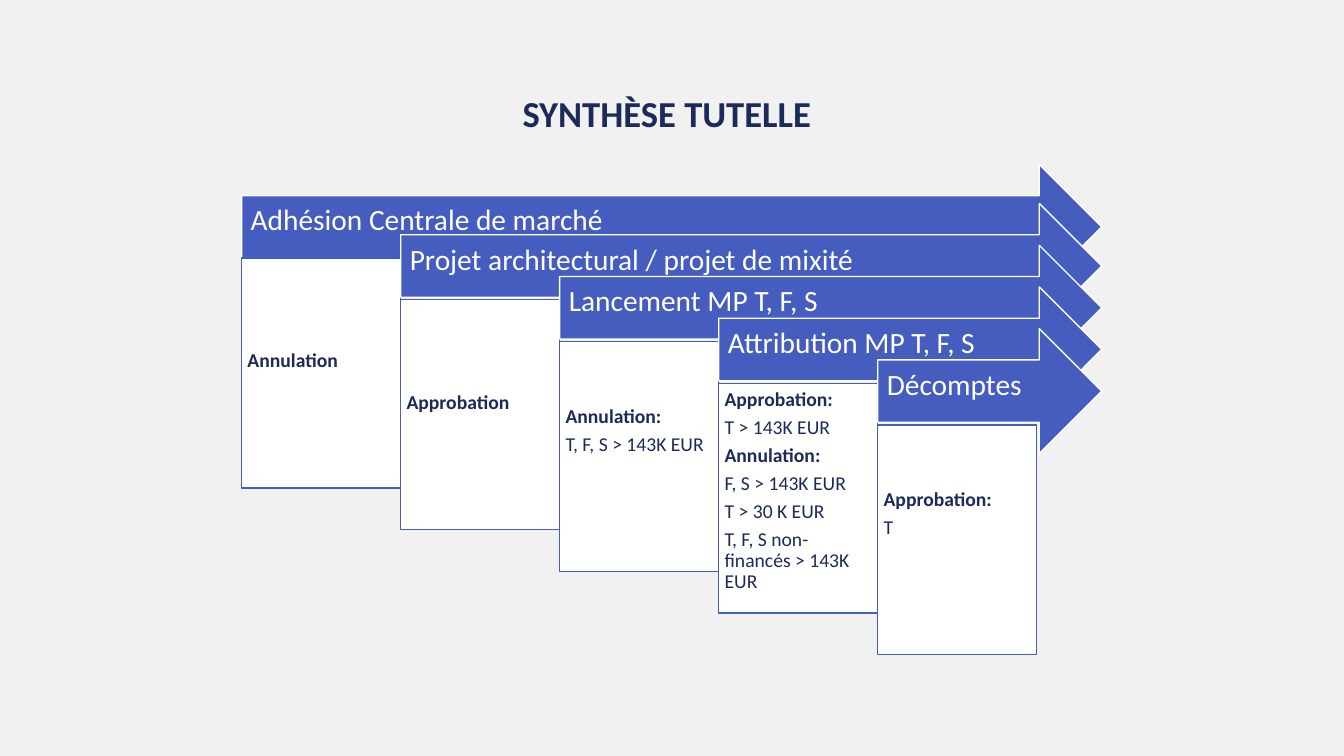
from dataclasses import dataclass
from pptx import Presentation
from pptx.dml.color import RGBColor
from pptx.enum.shapes import MSO_SHAPE
from pptx.enum.text import MSO_ANCHOR, MSO_AUTO_SIZE, PP_ALIGN
from pptx.util import Pt

# Content: arrow label, blank lead above the body text, lines (text, bold)
TITLE = "SYNTHÈSE TUTELLE"
STAGES = [
    ("Adhésion Centrale de marché", 62, [("Annulation", True)]),
    ("Projet architectural / projet de mixité", 62, [("Approbation", True)]),
    ("Lancement MP T, F, S", 42,
     [("Annulation:", True), ("T, F, S > 143K EUR", False)]),
    ("Attribution MP T, F, S", 0,
     [("Approbation:", True), ("T > 143K EUR", False),
      ("Annulation:", True), ("F, S > 143K EUR", False),
      ("T > 30 K EUR", False),
      ("T, F, S non-financés > 143K EUR", False)]),
    ("Décomptes", 42, [("Approbation:", True), ("T", False)]),
]


@dataclass
class Theme:
    font: str = "Calibri"
    back: str = "F1F1F1"
    ink: str = "1C2A59"
    blue: str = "455DBE"
    white: str = "FFFFFF"
    title: float = 26.1
    label: float = 21
    body: float = 14


theme = Theme()

# Layout in points
LEFT, RIGHT = 172.6, 787
STEP_X, STEP_Y = 113.6, 29.8
ARROW_TOP, FIRST_TOP, ARROW_H = 115.6, 117.4, 89.3
BODY_TOP, BODY_W, BODY_H = 184.3, 113.6, 164.2


def write(shape, lines, size, color, inset, anchor=MSO_ANCHOR.TOP,
          align=PP_ALIGN.LEFT, after=0):
    """Fill a shape with (text, bold) lines."""
    frame = shape.text_frame
    frame.word_wrap = True
    frame.auto_size = MSO_AUTO_SIZE.NONE
    frame.vertical_anchor = anchor
    (frame.margin_left, frame.margin_top,
     frame.margin_right, frame.margin_bottom) = map(Pt, inset)
    for i, (text, bold) in enumerate(lines):
        para = frame.add_paragraph() if i else frame.paragraphs[0]
        para.alignment = align
        para.line_spacing = 0.9
        para.space_before = Pt(0)
        para.space_after = Pt(after)
        run = para.add_run()
        run.text = text
        run.font.name = theme.font
        run.font.size = Pt(size)
        run.font.bold = bold
        run.font.color.rgb = RGBColor.from_string(color)


def draw(slide, kind, box, fill, line):
    shape = slide.shapes.add_shape(kind, *map(Pt, box))
    shape.shadow.inherit = False
    shape.fill.solid()
    shape.fill.fore_color.rgb = RGBColor.from_string(fill)
    shape.line.color.rgb = RGBColor.from_string(line)
    shape.line.width = Pt(1)
    return shape


def main():
    deck = Presentation()
    deck.slide_width, deck.slide_height = Pt(960), Pt(540)
    slide = deck.slides.add_slide(deck.slide_layouts[5])
    slide.background.fill.solid()
    slide.background.fill.fore_color.rgb = RGBColor.from_string(theme.back)

    # Title
    title = slide.shapes.title
    title.left, title.top, title.width, title.height = map(
        Pt, (66, 60, 828, 51))
    write(title, [(TITLE, True)], theme.title, theme.ink,
          (0, 3.6, 7.2, 14.4), MSO_ANCHOR.BOTTOM, PP_ALIGN.CENTER)

    # Staggered stages, each an arrow above a panel
    for i, (label, lead, lines) in enumerate(STAGES):
        x = LEFT + i * STEP_X
        top = ARROW_TOP + i * STEP_Y if i else FIRST_TOP
        arrow = draw(slide, MSO_SHAPE.RIGHT_ARROW,
                     (x, top, RIGHT - x, ARROW_H), theme.blue, theme.white)
        write(arrow, [(label, False)], theme.label, theme.white,
              (6.5, 6.5, 20, 14.2), MSO_ANCHOR.MIDDLE)
        panel = draw(slide, MSO_SHAPE.RECTANGLE,
                     (x, BODY_TOP + i * STEP_Y, BODY_W, BODY_H),
                     theme.white, theme.blue)
        write(panel, lines, theme.body, theme.ink,
              (4.2, 4.2 + lead, 4.2, 4.2), after=4.9)

    deck.save("out.pptx")


if __name__ == "__main__":
    main()
